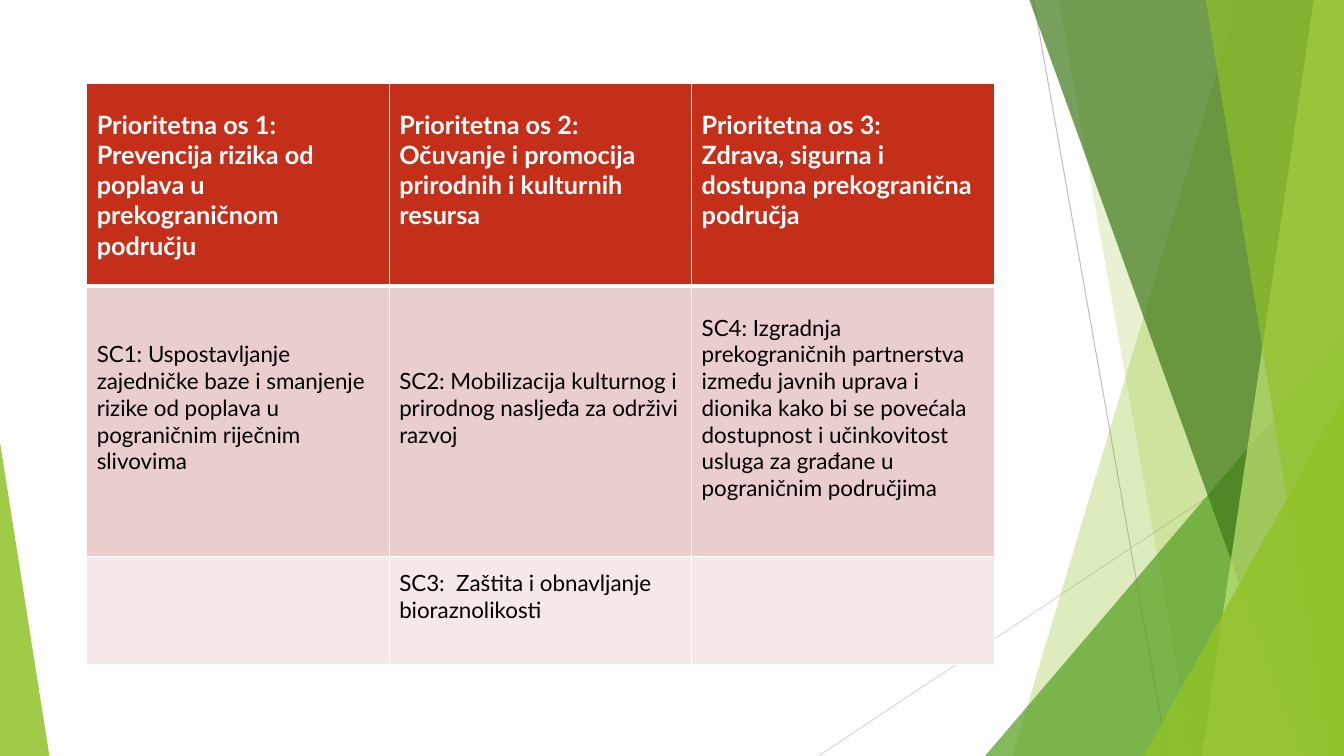
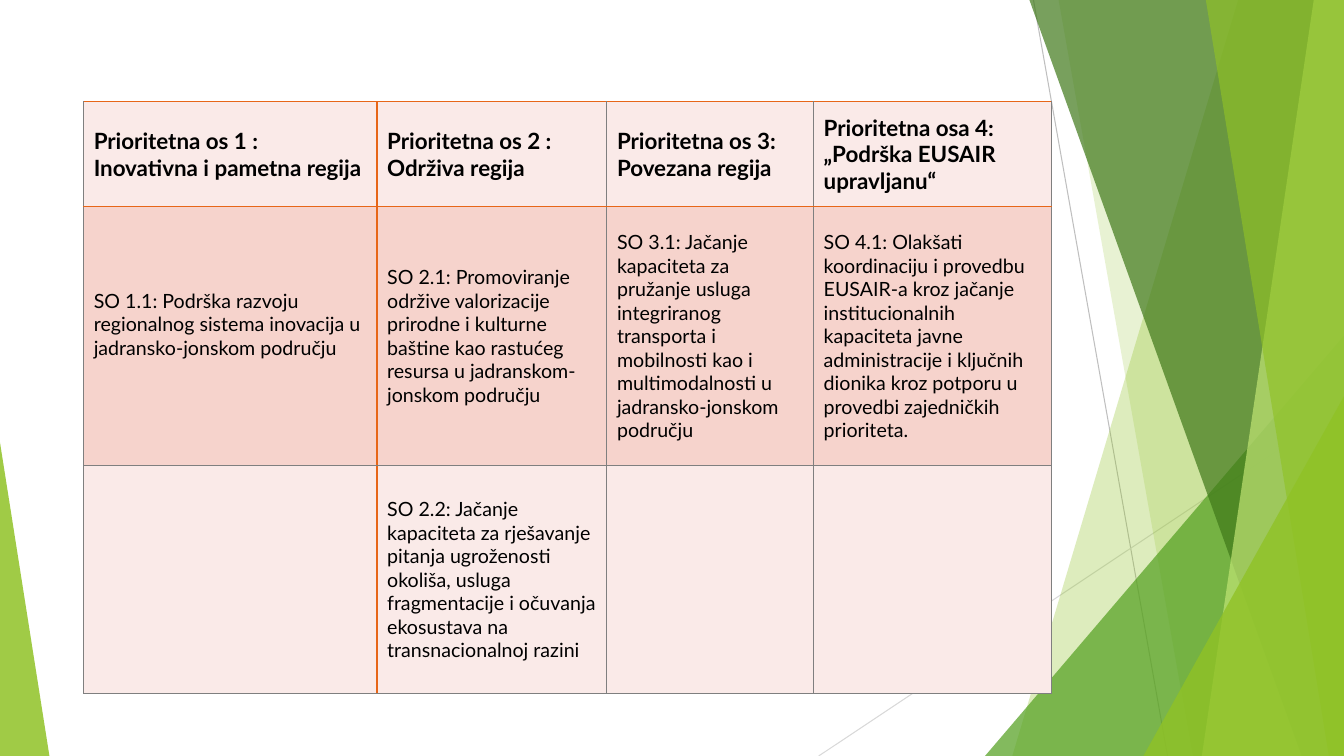
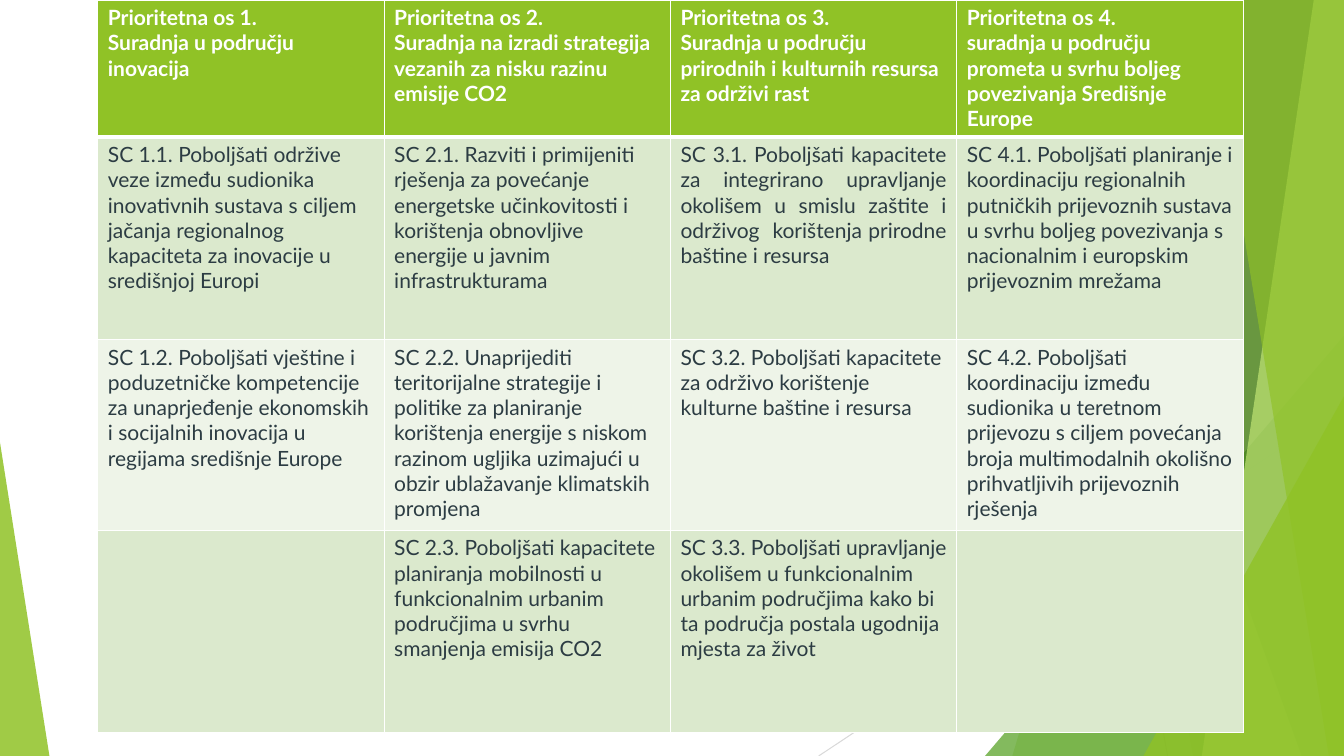
from dataclasses import dataclass, field

from lxml.etree import SubElement
from pptx import Presentation
from pptx.dml.color import RGBColor
from pptx.enum.shapes import MSO_CONNECTOR, MSO_SHAPE
from pptx.enum.text import MSO_ANCHOR, PP_ALIGN
from pptx.oxml import parse_xml
from pptx.oxml.ns import nsdecls, qn
from pptx.util import Inches, Pt


@dataclass(frozen=True)
class Theme:
    font: str = "Lato"
    white: str = "FFFFFF"
    black: str = "000000"
    slate: str = "2C3C43"
    lime: str = "90C226"
    pale_lime: str = "C0E474"
    green: str = "54A021"
    forest: str = "3F7819"
    ray: str = "BFBFBF"
    pale_ray: str = "D9D9D9"
    red: str = "C42F1A"
    rose: str = "EACDCD"
    pale_rose: str = "F5E8E8"
    orange: str = "E76618"
    grey: str = "7F7F7F"
    salmon: str = "F6D3CC"
    pale_salmon: str = "FAEAE8"
    leaf: str = "DBE9CD"
    pale_leaf: str = "EEF4E8"
    large: float = 18
    medium: float = 16
    compact: float = 15
    small: float = 14
    hairline: float = 0.75


THEME = Theme()


@dataclass(frozen=True)
class Box:
    left: float
    top: float
    width: float
    height: float

    @property
    def right(self):
        return self.left + self.width

    @property
    def bottom(self):
        return self.top + self.height


@dataclass(frozen=True)
class Look:
    header_fill: str
    body_fills: tuple
    header_color: str
    body_color: str
    header_size: float
    body_size: float
    anchor: MSO_ANCHOR
    grid: tuple
    row_rules: dict = field(default_factory=dict)
    column_rules: dict = field(default_factory=dict)


@dataclass(frozen=True)
class Entry:
    text: str = ""
    lift: float = 0
    align: PP_ALIGN = PP_ALIGN.LEFT


@dataclass(frozen=True)
class Priorities:
    left: float
    top: float
    widths: tuple
    heights: tuple
    look: Look
    rows: tuple


SLIDE = Box(0, 0, 13.33, 7.5)
FACETS = Box(9.77, 0, 3.56, 7.5)
LEFT_WEDGE = Box(0, 4.39, 0.49, 3.11)
WHITE_GRID = (THEME.white, 1)
HEADER_RULE = {1: (THEME.white, 3)}
ORANGE_RULE = (THEME.orange, 1)

FLOOD_LOOK = Look(
    THEME.red, (THEME.rose, THEME.pale_rose), THEME.white, THEME.black,
    THEME.large, THEME.medium, MSO_ANCHOR.MIDDLE, WHITE_GRID, HEADER_RULE)
REGION_LOOK = Look(
    THEME.pale_salmon, (THEME.salmon, THEME.pale_salmon), THEME.black, THEME.black,
    THEME.medium, THEME.small, MSO_ANCHOR.MIDDLE, (THEME.grey, THEME.hairline),
    {0: ORANGE_RULE, 1: ORANGE_RULE}, {1: ORANGE_RULE})
EUROPE_LOOK = Look(
    THEME.lime, (THEME.leaf, THEME.pale_leaf), THEME.white, THEME.slate,
    THEME.compact, THEME.compact, MSO_ANCHOR.TOP, WHITE_GRID, HEADER_RULE)

PROGRAMMES = (
    Priorities(0.86, 0.83, (3,) * 3, (2.01, 2.68, 1.07), FLOOD_LOOK, (
        (Entry("Prioritetna os 1:\nPrevencija rizika od poplava u prekograničnom području"),
         Entry("Prioritetna os 2:\nOčuvanje i promocija prirodnih i kulturnih resursa", 0.3),
         Entry("Prioritetna os 3:\nZdrava, sigurna i dostupna prekogranična područja", 0.3)),
        (Entry("SC1: Uspostavljanje zajedničke baze i smanjenje rizike od poplava u "
               "pograničnim riječnim slivovima", 0.27),
         Entry("SC2: Mobilizacija kulturnog i prirodnog nasljeđa za održivi razvoj", 0.27),
         Entry("SC4: Izgradnja prekograničnih partnerstva između javnih uprava i dionika "
               "kako bi se povećala dostupnost i učinkovitost usluga za građane u "
               "pograničnim područjima", 0.27)),
        (Entry(), Entry("SC3:  Zaštita i obnavljanje bioraznolikosti", 0.27), Entry()),
    )),
    Priorities(0.83, 1.01, (2.91, 2.28, 2.05, 2.36), (1.04, 2.57, 2.26), REGION_LOOK, (
        (Entry("Prioritetna os 1 :\nInovativna i pametna regija"),
         Entry("Prioritetna os 2 : Održiva regija"),
         Entry("Prioritetna os 3: Povezana regija"),
         Entry("Prioritetna osa 4: „Podrška EUSAIR upravljanu“")),
        (Entry("SO 1.1: Podrška razvoju regionalnog sistema inovacija u "
               "jadransko-jonskom području", 0.24),
         Entry("SO 2.1: Promoviranje održive valorizacije prirodne i kulturne baštine kao "
               "rastućeg resursa u jadranskom-jonskom području"),
         Entry("SO 3.1: Jačanje kapaciteta za pružanje usluga integriranog transporta i "
               "mobilnosti kao i multimodalnosti u jadransko-jonskom području"),
         Entry("SO 4.1: Olakšati koordinaciju i provedbu EUSAIR-a kroz jačanje "
               "institucionalnih kapaciteta javne administracije i ključnih dionika kroz "
               "potporu u provedbi zajedničkih prioriteta.")),
        (Entry(),
         Entry("SO 2.2: Jačanje kapaciteta za rješavanje pitanja ugroženosti okoliša, "
               "usluga fragmentacije i očuvanja ekosustava na transnacionalnoj razini"),
         Entry(), Entry()),
    )),
    Priorities(0.97, 0, (2.84,) * 4, (1.36, 2.01, 1.89, 2.01), EUROPE_LOOK, (
        (Entry("Prioritetna os 1.\nSuradnja u području inovacija"),
         Entry("Prioritetna os 2.\nSuradnja na izradi strategija vezanih za nisku razinu "
               "emisije CO2"),
         Entry("Prioritetna os 3.\nSuradnja u području prirodnih i kulturnih resursa za "
               "održivi rast"),
         Entry("Prioritetna os 4.\nsuradnja u području prometa u svrhu boljeg povezivanja "
               "Središnje Europe")),
        (Entry("SC 1.1. Poboljšati održive veze između sudionika inovativnih sustava s "
               "ciljem jačanja regionalnog kapaciteta za inovacije u središnjoj Europi"),
         Entry("SC 2.1. Razviti i primijeniti rješenja za povećanje energetske "
               "učinkovitosti i korištenja obnovljive energije u javnim infrastrukturama"),
         Entry("SC 3.1. Poboljšati kapacitete za integrirano upravljanje okolišem u smislu "
               "zaštite i održivog  korištenja prirodne baštine i resursa",
               align=PP_ALIGN.JUSTIFY),
         Entry("SC 4.1. Poboljšati planiranje i koordinaciju regionalnih putničkih "
               "prijevoznih sustava u svrhu boljeg povezivanja s nacionalnim i europskim "
               "prijevoznim mrežama")),
        (Entry("SC 1.2. Poboljšati vještine i poduzetničke kompetencije za unaprjeđenje "
               "ekonomskih i socijalnih inovacija u regijama središnje Europe"),
         Entry("SC 2.2. Unaprijediti teritorijalne strategije i politike za planiranje "
               "korištenja energije s niskom razinom ugljika uzimajući u obzir ublažavanje "
               "klimatskih promjena"),
         Entry("SC 3.2. Poboljšati kapacitete za održivo korištenje kulturne baštine i "
               "resursa"),
         Entry("SC 4.2. Poboljšati koordinaciju između sudionika u teretnom prijevozu s "
               "ciljem povećanja broja multimodalnih okolišno prihvatljivih prijevoznih "
               "rješenja")),
        (Entry(),
         Entry("SC 2.3. Poboljšati kapacitete planiranja mobilnosti u funkcionalnim "
               "urbanim područjima u svrhu smanjenja emisija CO2"),
         Entry("SC 3.3. Poboljšati upravljanje okolišem u funkcionalnim urbanim područjima "
               "kako bi ta područja postala ugodnija mjesta za život"),
         Entry()),
    )),
)


def tint(facet, color, opacity):
    facet.shadow.inherit = False
    facet.line.fill.background()
    facet.fill.solid()
    facet.fill.fore_color.rgb = RGBColor.from_string(color)
    solid = facet.element.spPr.find(qn("a:solidFill"))
    SubElement(solid[0], qn("a:alpha")).set("val", str(opacity * 1000))


def draw_ray(slide, box, start, end, color):
    ray = slide.shapes.add_connector(
        MSO_CONNECTOR.STRAIGHT,
        Inches(box.left + start[0]), Inches(box.top + start[1]),
        Inches(box.left + end[0]), Inches(box.top + end[1]))
    ray.line.color.rgb = RGBColor.from_string(color)
    ray.line.width = Pt(THEME.hairline)
    SubElement(ray.element.spPr, qn("a:effectLst"))


def draw_band(slide, box, top_offset, bottom_offset, color, opacity):
    corners = ((box.right, box.top), (box.right, box.bottom),
               (box.left + bottom_offset, box.bottom))
    outline = slide.shapes.build_freeform(
        Inches(box.left + top_offset), Inches(box.top))
    outline.add_line_segments([(Inches(x), Inches(y)) for x, y in corners])
    tint(outline.convert_to_shape(), color, opacity)


def draw_wedge(slide, box, peak, color, opacity):
    wedge = slide.shapes.add_shape(
        MSO_SHAPE.ISOSCELES_TRIANGLE, Inches(box.left), Inches(box.top),
        Inches(box.width), Inches(box.height))
    wedge.adjustments[0] = peak
    tint(wedge, color, opacity)


def corner_box(box, width, height):
    return Box(box.right - width, box.bottom - height, width, height)


def draw_facets(slide, box):
    draw_ray(slide, box, (0.48, 0), (1.81, box.height), THEME.ray)
    draw_ray(slide, box, (box.width, 4.03), (-1.65, box.height), THEME.pale_ray)
    draw_band(slide, box, 2.51, 0.27, THEME.lime, 30)
    draw_band(slide, box, 0.73, 2.06, THEME.lime, 20)
    draw_wedge(slide, corner_box(box, box.width, 4.17), 1, THEME.green, 72)
    draw_band(slide, box, 0.44, 3.14, THEME.forest, 70)
    draw_band(slide, box, 3.26, 2.15, THEME.pale_lime, 70)
    draw_band(slide, box, 2.19, 3.41, THEME.lime, 65)
    draw_wedge(slide, corner_box(box, 1.99, 3.57), 1, THEME.lime, 80)


def share_backdrop(slide):
    layout = slide.slide_layout
    for placeholder in list(layout.placeholders):
        layout.shapes.element.remove(placeholder.element)
    draw_facets(slide, FACETS)
    draw_wedge(slide, LEFT_WEDGE, 0, THEME.lime, 85)
    for part in list(slide.shapes):
        layout.shapes.element.append(part.element)


def set_borders(cell, rules):
    properties = cell._tc.get_or_add_tcPr()
    for position, (side, (color, width)) in enumerate(zip("LRTB", rules)):
        properties.insert(position, parse_xml(
            f'<a:ln{side} {nsdecls("a")} w="{Pt(width)}"><a:solidFill>'
            f'<a:srgbClr val="{color}"/></a:solidFill></a:ln{side}>'))


def fill_cell(cell, entry, look, row):
    header = row == 0
    fill = look.header_fill if header else look.body_fills[(row - 1) % len(look.body_fills)]
    cell.fill.solid()
    cell.fill.fore_color.rgb = RGBColor.from_string(fill)
    cell.vertical_anchor = look.anchor
    cell.margin_bottom = Inches(0.05 + entry.lift)
    cell.text_frame.text = entry.text
    for paragraph in cell.text_frame.paragraphs:
        paragraph.alignment = entry.align
        for run in paragraph.runs:
            run.font.name = THEME.font
            run.font.bold = header
            run.font.size = Pt(look.header_size if header else look.body_size)
            run.font.color.rgb = RGBColor.from_string(
                look.header_color if header else look.body_color)


def draw_priorities(slide, programme):
    look = programme.look
    table = slide.shapes.add_table(
        len(programme.heights), len(programme.widths),
        Inches(programme.left), Inches(programme.top),
        Inches(sum(programme.widths)), Inches(sum(programme.heights))).table
    table.horz_banding = False
    for column, width in zip(table.columns, programme.widths):
        column.width = Inches(width)
    for row, height in zip(table.rows, programme.heights):
        row.height = Inches(height)
    for r, entries in enumerate(programme.rows):
        for c, entry in enumerate(entries):
            cell = table.cell(r, c)
            fill_cell(cell, entry, look, r)
            set_borders(cell, [look.column_rules.get(edge, look.grid) for edge in (c, c + 1)]
                        + [look.row_rules.get(edge, look.grid) for edge in (r, r + 1)])


def main():
    deck = Presentation()
    deck.slide_width = Inches(SLIDE.width)
    deck.slide_height = Inches(SLIDE.height)
    blank = deck.slide_layouts[6]
    slides = [deck.slides.add_slide(blank) for _ in PROGRAMMES]
    share_backdrop(slides[0])
    for slide, programme in zip(slides, PROGRAMMES):
        draw_priorities(slide, programme)
    deck.save("out.pptx")


if __name__ == "__main__":
    main()
